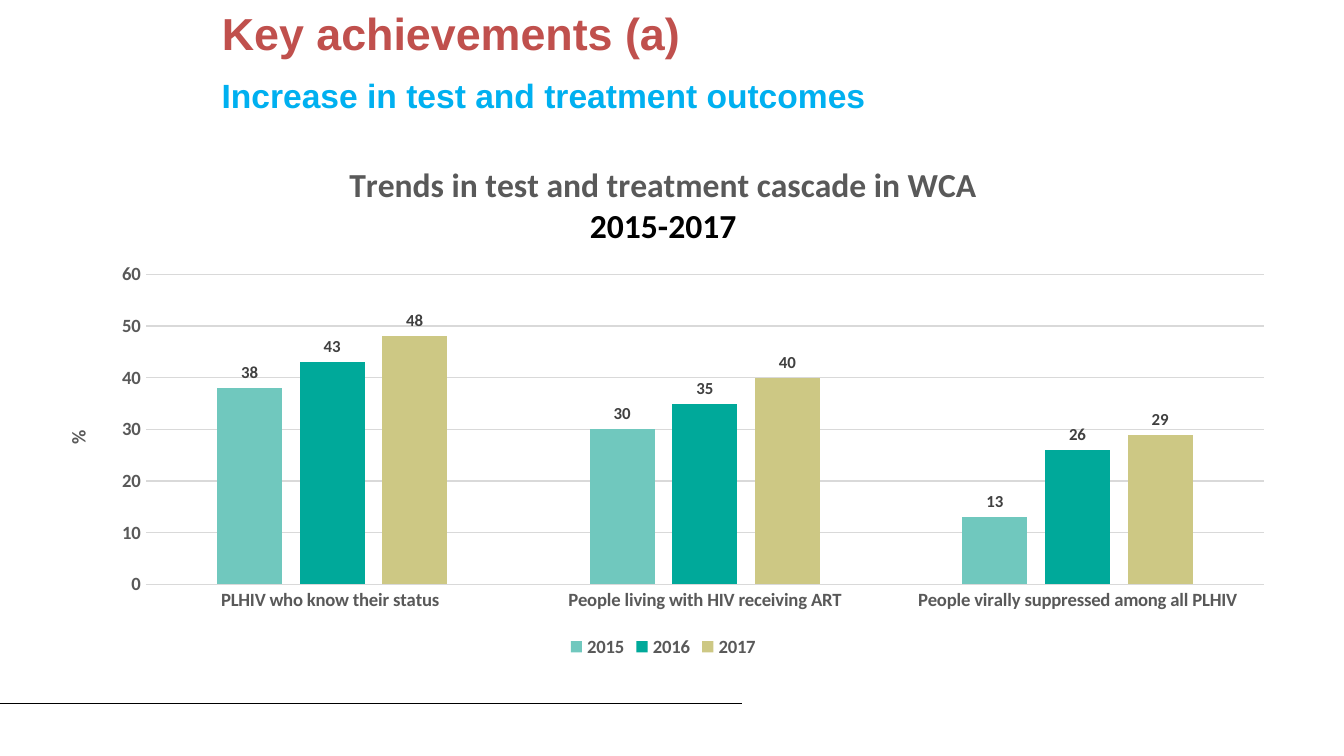
import pptx
import pptx.chart.data
import pptx.dml.color
import pptx.enum.chart
import pptx.enum.shapes
import pptx.enum.text
import pptx.util
from lxml import etree

Inches = pptx.util.Inches
Pt = pptx.util.Pt
GREY, GRID = "595959", "D9D9D9"


def colour(hex_text):
    return pptx.dml.color.RGBColor.from_string(hex_text)


def style(font, size, hex_text, name="Calibri"):
    font.name, font.size, font.bold = name, Pt(size), True
    font.color.rgb = colour(hex_text)


# Widescreen page, 16:9
deck = pptx.Presentation()
deck.slide_width = Inches(10)
deck.slide_height = deck.slide_width * 9 // 16
width, height = deck.slide_width, deck.slide_height
page = deck.slides.add_slide(deck.slide_layouts[5])
text_left = int(width * 0.155)

# Footer rule
rule = page.shapes.add_connector(
    pptx.enum.shapes.MSO_CONNECTOR.STRAIGHT,
    0, int(height * 0.93), int(width * 0.552), int(height * 0.93))
rule.line.width = Pt(0.25)
rule.line.color.rgb = colour("000000")
properties = rule.element.spPr
etree.SubElement(properties, pptx.oxml.ns.qn("a:effectLst"))

# Title and subtitle
title = page.shapes.title
title.left, title.top = text_left, Inches(-0.01)
title.width, title.height = int(width * 0.638), Inches(0.5)
subtitle = page.shapes.add_textbox(
    text_left, Inches(0.58), int(width * 0.705), Inches(0.34))
headings = [
    (title, "Key achievements (a)", 24, "C0504D"),
    (subtitle, "Increase in test and treatment outcomes", 18, "00B0F0"),
]
for box, words, size, hex_text in headings:
    frame = box.text_frame
    frame.word_wrap = True
    frame.auto_size = pptx.enum.text.MSO_AUTO_SIZE.NONE
    frame.vertical_anchor = pptx.enum.text.MSO_ANCHOR.TOP
    para = frame.paragraphs[0]
    para.alignment = pptx.enum.text.PP_ALIGN.LEFT
    span = para.add_run()
    span.text = words
    style(span.font, size, hex_text, "Arial")
subtitle.text_frame.paragraphs[0].line_spacing = Pt(16.5)

# Chart data
data = pptx.chart.data.CategoryChartData(number_format="0")
data.categories = [
    "PLHIV who know their status ",
    "People living with HIV receiving ART",
    "People virally suppressed among all PLHIV",
]
years = [
    ("2015", (38, 30, 13), "70C8BE"),
    ("2016", (43, 35, 26), "00A99A"),
    ("2017", (48, 40, 29), "CDC884"),
]
for year, values, _ in years:
    data.add_series(year, values)
chart = page.shapes.add_chart(
    pptx.enum.chart.XL_CHART_TYPE.COLUMN_CLUSTERED,
    int(width * 0.028), Inches(1.05),
    int(width * 0.931), int(height * 0.69), data).chart
chart.font.name, chart.font.size = "Calibri", Pt(10)
chart.font.color.rgb = colour("000000")

# Chart title
chart.has_title = True
chart.chart_title.include_in_layout = False
frame = chart.chart_title.text_frame
first, second = frame.paragraphs[0], frame.add_paragraph()
for para, words, hex_text in [
        (first, "Trends in test and treatment cascade in WCA", GREY),
        (second, "2015-2017", "000000")]:
    span = para.add_run()
    span.text = words
    style(span.font, 18, hex_text)

# Columns and their labels
plot = chart.plots[0]
plot.gap_width, plot.overlap, plot.vary_by_categories = 219, -27, False
for series, (_, _, hex_text) in zip(plot.series, years):
    series.format.fill.solid()
    series.format.fill.fore_color.rgb = colour(hex_text)
    labels = series.data_labels
    labels.show_value = True
    labels.number_format, labels.number_format_is_linked = "0", False
    labels.position = pptx.enum.chart.XL_LABEL_POSITION.OUTSIDE_END
    style(labels.font, 9, "404040")

# Axes
for axis in (chart.category_axis, chart.value_axis):
    axis.major_tick_mark = pptx.enum.chart.XL_TICK_MARK.NONE
    axis.minor_tick_mark = pptx.enum.chart.XL_TICK_MARK.NONE
    style(axis.tick_labels.font, 10, GREY)
axis = chart.value_axis
axis.minimum_scale, axis.maximum_scale, axis.major_unit = 0, 60, 10
axis.tick_labels.number_format = "0"
axis.tick_labels.number_format_is_linked = False
axis.format.line.fill.background()
for line in (chart.category_axis.format.line, axis.major_gridlines.format.line):
    line.width = Pt(0.75)
    line.color.rgb = colour(GRID)
span = axis.axis_title.text_frame.paragraphs[0].add_run()
span.text = "%"
style(span.font, 10.5, GREY)
for body in chart.element.xpath(".//c:valAx/c:title//a:bodyPr"):
    body.set("rot", "-5400000")
    body.set("vert", "horz")

# Legend
chart.has_legend = True
chart.legend.position = pptx.enum.chart.XL_LEGEND_POSITION.BOTTOM
chart.legend.include_in_layout = False
style(chart.legend.font, 10, GREY)

deck.save("out.pptx")
